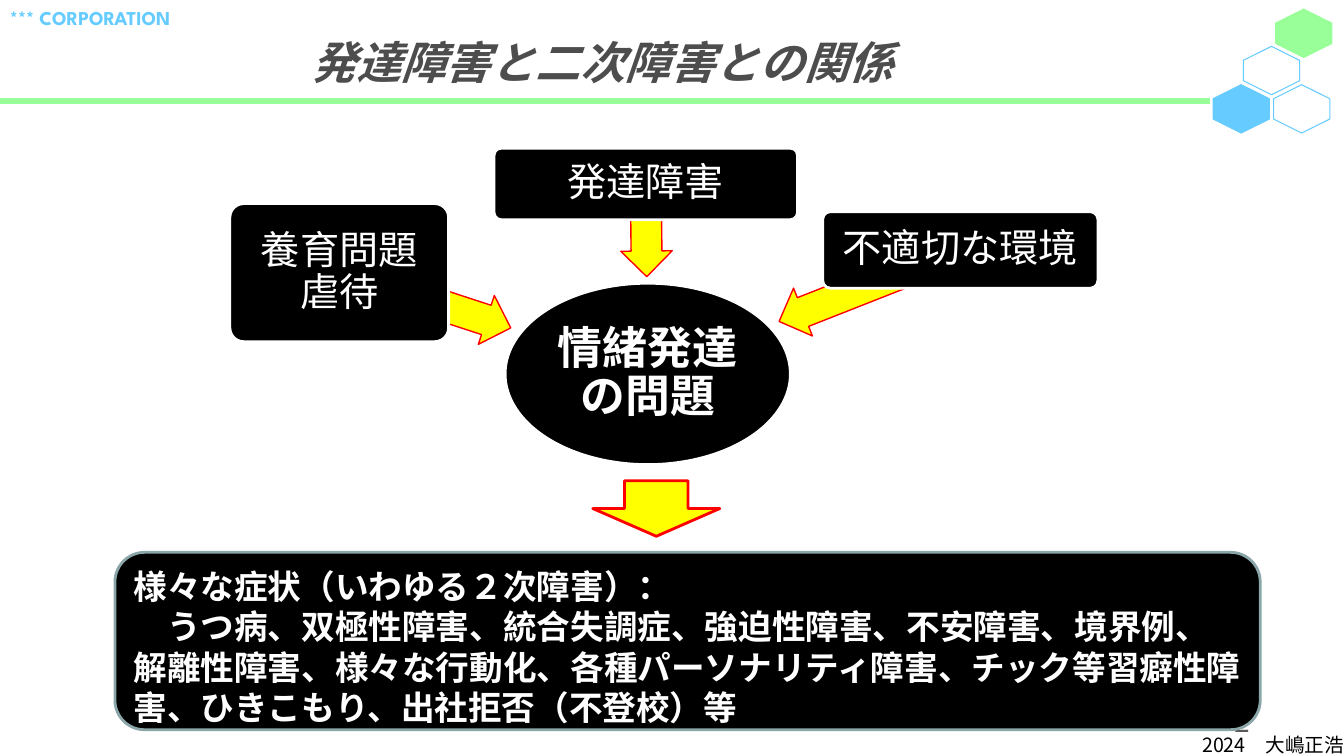
from lxml.etree import SubElement
from pptx import Presentation
from pptx.dml.color import RGBColor
from pptx.enum.shapes import MSO_CONNECTOR, MSO_SHAPE
from pptx.enum.text import MSO_ANCHOR, PP_ALIGN
from pptx.oxml.ns import qn
from pptx.util import Inches, Pt

JAPANESE, LATIN = "Noto Sans CJK JP", "League Spartan"
BLACK, WHITE, GREEN, BLUE = "000000", "FFFFFF", "99FF99", "66CCFF"
YELLOW, RED = "FFFF00", "FF0000"

CORPORATION = "*** CORPORATION"
TITLE = "発達障害と二次障害との関係"
PAGE_NUMBER = "2"
FOOTER = "2024　大嶋正浩"
CENTER_PROBLEM = "情緒発達の問題"
SYMPTOMS = [
    "様々な症状（いわゆる２次障害）：",
    "　うつ病、双極性障害、統合失調症、強迫性障害、不安障害、境界例、"
    "解離性障害、様々な行動化、各種パーソナリティ障害、チック等習癖性障害、"
    "ひきこもり、出社拒否（不登校）等",
]
CAUSES = [
    ("養育問題\v虐待", (2.28, 2.02, 2.17, 1.37), (3.32, 2.72, 1.79, 0.51), 198.1),
    ("発達障害", (4.9, 1.47, 3.01, 0.71), (5.95, 2.03, 0.92, 0.51), 269.4),
    ("不適切な環境", (8.16, 2.1, 2.73, 0.76), (7.66, 2.58, 1.93, 0.51), 338.5),
]
HEXAGONS = [
    (12.69, 0.05, GREEN, GREEN),
    (12.37, 0.42, None, BLUE),
    (12.67, 0.8, None, BLUE),
    (12.07, 0.8, BLUE, BLUE),
]

presentation = Presentation()
presentation.slide_width, presentation.slide_height = Inches(13.33), Inches(7.5)
slide = presentation.slides.add_slide(presentation.slide_layouts[6])


def color(value):
    return RGBColor.from_string(value)


def add_shape(kind, box, fill, line, width, adjustments=(), rotation=0):
    shape = slide.shapes.add_shape(kind, *map(Inches, box))
    shape.shadow.inherit = False
    shape.rotation = rotation
    for index, value in enumerate(adjustments):
        shape.adjustments[index] = value
    if fill:
        shape.fill.solid()
        shape.fill.fore_color.rgb = color(fill)
    else:
        shape.fill.background()
    shape.line.color.rgb = color(line)
    shape.line.width = Pt(width)
    return shape


def write(shape, lines, size, ink, bold=False, italic=False, align=PP_ALIGN.LEFT,
          anchor=MSO_ANCHOR.TOP, insets=(0.1, 0.05, 0.1, 0.05), spacing=None,
          wrap=True, typeface=JAPANESE):
    frame = shape.text_frame
    frame.word_wrap = wrap
    frame.vertical_anchor = anchor
    frame.margin_left, frame.margin_top, frame.margin_right, frame.margin_bottom = map(
        Inches, insets)
    frame.text = "\n".join(lines)
    for paragraph in frame.paragraphs:
        paragraph.alignment = align
        paragraph.line_spacing = spacing
        font = paragraph.font
        font.size, font.bold, font.italic = Pt(size), bold, italic
        font.color.rgb = color(ink)
        font.name = typeface
        properties = paragraph._p.pPr.find(qn("a:defRPr"))
        SubElement(properties, qn("a:ea")).set("typeface", typeface)


def add_text(box, text, size, ink, **options):
    write(slide.shapes.add_textbox(*map(Inches, box)), [text], size, ink, **options)


add_text((0, 0.01, 1.93, 0.34), CORPORATION, 14, BLUE, bold=True, wrap=False,
         typeface=LATIN)

for left, top, fill, line in HEXAGONS:
    add_shape(MSO_SHAPE.HEXAGON, (left, top, 0.48, 0.56), fill, line, 0.75,
              (0.29, 1.15), 90)

rule = slide.shapes.add_connector(
    MSO_CONNECTOR.STRAIGHT, Inches(0), Inches(1), Inches(12), Inches(1))
rule.line.color.rgb = color(GREEN)
rule.line.width = Pt(4.5)
SubElement(rule._element.spPr, qn("a:effectLst"))

add_text((2.99, 0.15, 6.51, 0.77), TITLE, 32, "4D4D4D", bold=True, italic=True,
         anchor=MSO_ANCHOR.MIDDLE, insets=(0.1, 0.2, 0.1, 0.05))

centered = {"align": PP_ALIGN.CENTER, "anchor": MSO_ANCHOR.MIDDLE, "spacing": 0.9}
ellipse = add_shape(MSO_SHAPE.OVAL, (5.01, 2.81, 2.83, 1.8), BLACK, WHITE, 2)
write(ellipse, [CENTER_PROBLEM], 32, WHITE, bold=True, insets=(0.02,) * 4, **centered)

for label, cause_box, arrow_box, angle in CAUSES:
    add_shape(MSO_SHAPE.LEFT_ARROW, arrow_box, YELLOW, RED, 1, (0.6, 0.5), angle)
    cause = add_shape(MSO_SHAPE.ROUNDED_RECTANGLE, cause_box, BLACK, WHITE, 2, (0.1,))
    write(cause, [label], 28, WHITE, insets=(0.06,) * 4, **centered)

add_text((9.42, 6.97, 3.08, 0.38), PAGE_NUMBER, 20, "595959",
         align=PP_ALIGN.RIGHT, anchor=MSO_ANCHOR.MIDDLE)
add_shape(MSO_SHAPE.DOWN_ARROW, (5.88, 4.77, 1.26, 0.55), YELLOW, RED, 2)
symptoms = add_shape(MSO_SHAPE.ROUNDED_RECTANGLE, (1.14, 5.48, 11.36, 1.76),
                     BLACK, "8AA6A8", 2)
write(symptoms, SYMPTOMS, 24, WHITE, bold=True)
add_text((11.37, 7.22, 2.06, 0.34), FOOTER, 14, BLACK, align=PP_ALIGN.RIGHT)

presentation.save("out.pptx")
